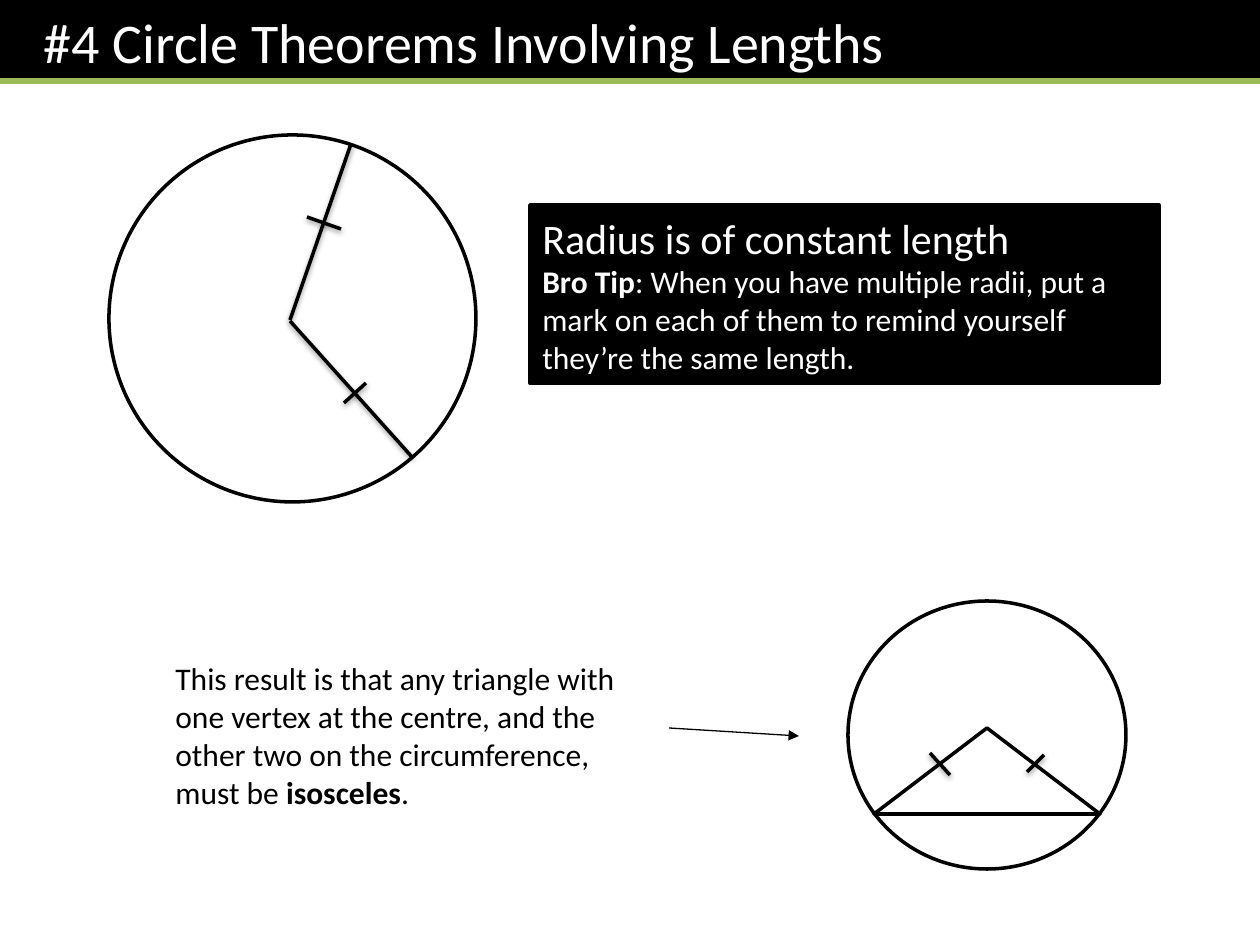
from dataclasses import dataclass
from typing import NamedTuple

from lxml.etree import SubElement
from pptx import Presentation
from pptx.dml.color import RGBColor
from pptx.enum.shapes import MSO_CONNECTOR as CONN, MSO_SHAPE as SHAPE
from pptx.enum.text import MSO_ANCHOR as ANCHOR, PP_ALIGN as ALIGN
from pptx.oxml.ns import qn
from pptx.util import Emu, Pt

PX_PER_INCH = 126


def px(n: int) -> Emu:
    return Emu(round(n * 914400 / PX_PER_INCH))


@dataclass(frozen=True)
class Theme:
    font: str = "Calibri"
    black: str = "000000"
    white: str = "FFFFFF"
    accent: str = "9BBB59"
    title: int = 32
    heading: int = 24
    body: int = 18
    stroke: float = 2
    rule: float = 3
    thin: float = 0.75


T = Theme()


class Box(NamedTuple):
    left: int
    top: int
    width: int
    height: int


class Segment(NamedTuple):
    x1: int
    y1: int
    x2: int
    y2: int


class Run(NamedTuple):
    text: str
    size: int = T.body
    bold: bool = False


class Figure(NamedTuple):
    kind: SHAPE
    box: Box


def rgb(color: str) -> RGBColor:
    return RGBColor.from_string(color)


def add_figure(s, kind: SHAPE, box: Box, fill: str, outlined: bool = True):
    sp = s.shapes.add_shape(kind, *map(px, box))
    sp.shadow.inherit = False
    sp.fill.solid()
    sp.fill.fore_color.rgb = rgb(fill)
    if outlined:
        sp.line.color.rgb = rgb(T.black)
        sp.line.width = Pt(T.stroke)
    else:
        sp.line.fill.background()
    return sp


def add_line(s, seg: Segment, color: str = T.black, width: float = T.stroke,
             shadow: bool = False, arrow: bool = False) -> None:
    cx = s.shapes.add_connector(CONN.STRAIGHT, *map(px, seg))
    cx.line.color.rgb = rgb(color)
    cx.line.width = Pt(width)
    if arrow:
        SubElement(cx.line._get_or_add_ln(), qn("a:tailEnd"), type="triangle")
    effects = SubElement(cx._element.spPr, qn("a:effectLst"))
    if shadow:
        outer = SubElement(effects, qn("a:outerShdw"), blurRad=str(Pt(3.1)),
                           dist=str(Pt(1.6)), dir="5400000", rotWithShape="0")
        clr = SubElement(outer, qn("a:srgbClr"), val=T.black)
        SubElement(clr, qn("a:alpha"), val="38000")


def write(sp, paragraphs: list[list[Run]], color: str,
          anchor: ANCHOR = ANCHOR.MIDDLE) -> None:
    tf = sp.text_frame
    tf.word_wrap = True
    tf.vertical_anchor = anchor
    for i, runs in enumerate(paragraphs):
        p = tf.add_paragraph() if i else tf.paragraphs[0]
        p.alignment = ALIGN.LEFT
        for run in runs:
            r = p.add_run()
            r.text = run.text
            r.font.name = T.font
            r.font.size = Pt(run.size)
            r.font.bold = run.bold
            r.font.color.rgb = rgb(color)


TITLE = [[Run("#4 Circle Theorems Involving Lengths", T.title)]]
TIP = [
    [Run("Radius is of constant length", T.heading)],
    [Run("Bro Tip", bold=True),
     Run(": When you have multiple radii, put a mark on each of them to "
         "remind yourself they’re the same length.")],
]
RESULT = [[
    Run("This result is that any triangle with one vertex at the centre, and "
        "the other two on the circumference, must be "),
    Run("isosceles", bold=True),
    Run("."),
]]

FIGURES = [
    Figure(SHAPE.OVAL, Box(109, 135, 367, 367)),
    Figure(SHAPE.OVAL, Box(848, 601, 278, 268)),
    Figure(SHAPE.ISOSCELES_TRIANGLE, Box(874, 728, 226, 86)),
]
RADII = [Segment(290, 320, 351, 144), Segment(290, 321, 412, 457)]
TICKS = [
    Segment(307, 217, 341, 229),
    Segment(344, 403, 366, 383),
    Segment(930, 753, 950, 775),
    Segment(1044, 755, 1027, 772),
]


def main() -> None:
    prs = Presentation()
    prs.slide_width, prs.slide_height = px(1260), px(945)
    s = prs.slides.add_slide(prs.slide_layouts[6])

    # Title bar
    bar = add_figure(s, SHAPE.RECTANGLE, Box(0, 0, 1260, 83), T.black, outlined=False)
    bar.text_frame.margin_left = px(44)
    write(bar, TITLE, T.white)
    add_line(s, Segment(0, 81, 1260, 81), T.accent, T.rule)

    # Circles and triangle, with marked radii
    for fig in FIGURES:
        add_figure(s, fig.kind, fig.box, T.white)
    for seg in RADII + TICKS:
        add_line(s, seg, shadow=True)

    # Theorem box
    tip = add_figure(s, SHAPE.RECTANGLE, Box(530, 205, 629, 178), T.black)
    write(tip, TIP, T.white)

    # Consequence, with an arrow to its figure
    note = s.shapes.add_textbox(*map(px, Box(163, 653, 486, 165)))
    write(note, RESULT, T.black, ANCHOR.TOP)
    add_line(s, Segment(669, 728, 799, 736), width=T.thin, arrow=True)

    prs.save("out.pptx")


if __name__ == "__main__":
    main()
